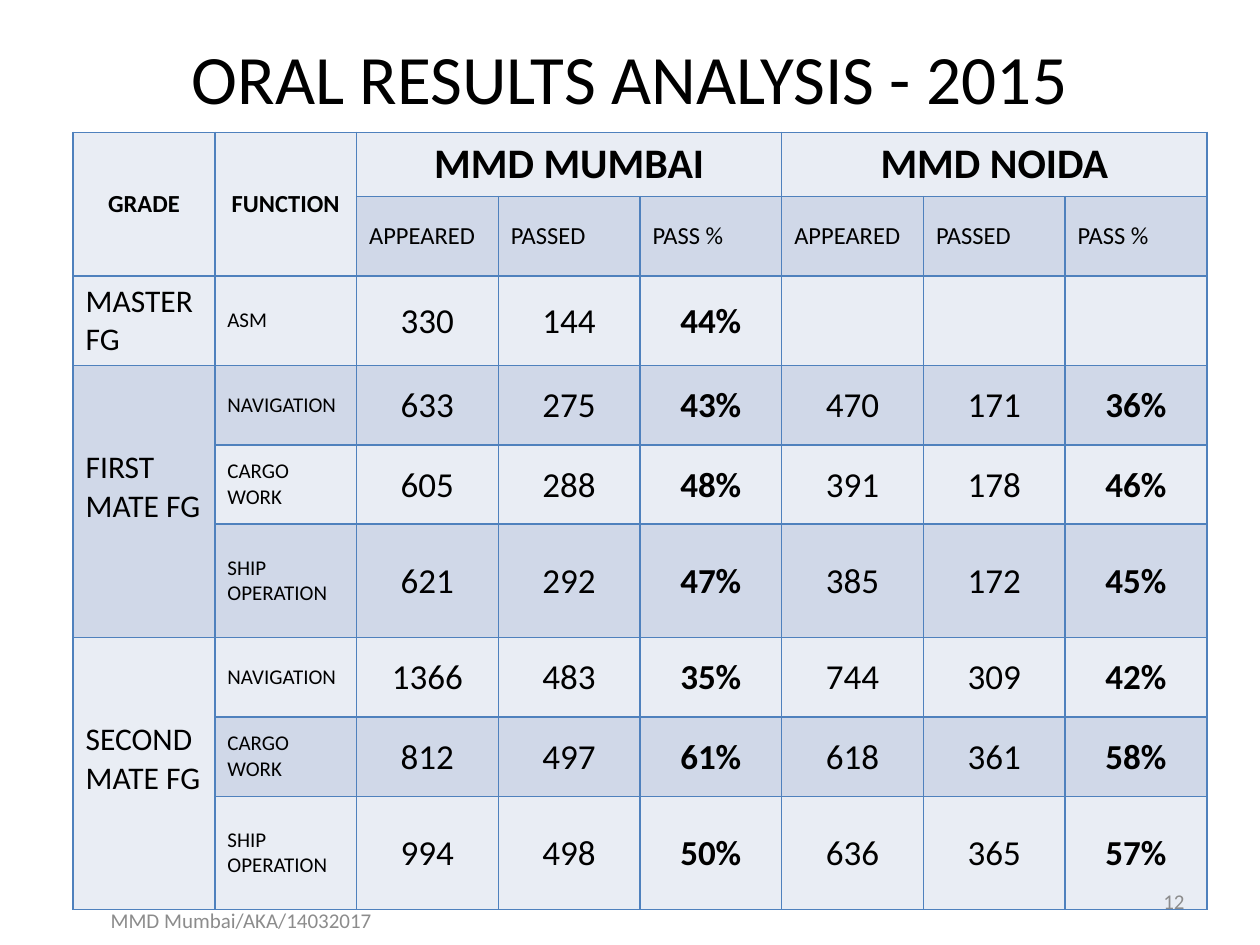
from dataclasses import dataclass

import pptx
import pptx.dml.color
import pptx.enum.text
import pptx.oxml
import pptx.oxml.ns
import pptx.util
from pptx.util import Inches

ALIGN = pptx.enum.text.PP_ALIGN
ANCHOR = pptx.enum.text.MSO_ANCHOR


@dataclass(frozen=True)
class Theme:
    font: str = "Calibri"
    text: str = "000000"
    muted: str = "8C8C8C"
    border: str = "4F81BD"
    stripes: tuple[str, str] = ("E9EDF4", "D0D8E8")
    title: float = 39.6
    office: float = 24
    number: float = 20
    grade: float = 18
    header: float = 14
    small: float = 12


@dataclass(frozen=True)
class Result:
    function: str
    mumbai: tuple[str, str, str]
    noidа: tuple[str, str, str] = ("", "", "")


@dataclass(frozen=True)
class Grade:
    name: str
    results: tuple[Result, ...]
    top: float = 0.66


@dataclass(frozen=True)
class Label:
    text: str
    box: tuple[float, float, float, float]
    align: ALIGN


THEME = Theme()
ROW_HEIGHTS = (0.51, 0.63, 0.71, 0.63, 0.63, 0.9, 0.63, 0.63, 0.9)
COLUMNS = 8
TABLE_WIDTH = 9
OFFICES = ("MMD MUMBAI", "MMD NOIDA")
MEASURES = ("APPEARED", "PASSED", "PASS %")
GRADES = (
    Grade("MASTER FG", (Result("ASM", ("330", "144", "44%")),), 0.05),
    Grade("FIRST MATE FG", (
        Result("NAVIGATION", ("633", "275", "43%"), ("470", "171", "36%")),
        Result("CARGO WORK", ("605", "288", "48%"), ("391", "178", "46%")),
        Result("SHIP OPERATION", ("621", "292", "47%"), ("385", "172", "45%")),
    )),
    Grade("SECOND MATE FG", (
        Result("NAVIGATION", ("1366", "483", "35%"), ("744", "309", "42%")),
        Result("CARGO WORK", ("812", "497", "61%"), ("618", "361", "58%")),
        Result("SHIP OPERATION", ("994", "498", "50%"), ("636", "365", "57%")),
    )),
)
LABELS = (
    Label("12", (7.17, 6.95, 2.33, 0.4), ALIGN.RIGHT),
    Label("MMD Mumbai/AKA/14032017", (0.33, 7.1, 3.17, 0.4), ALIGN.CENTER),
)


def rgb(value: str) -> pptx.dml.color.RGBColor:
    return pptx.dml.color.RGBColor.from_string(value)


def write(tf, text: str, size: float, color: str = THEME.text,
          align: ALIGN = ALIGN.LEFT, bold: bool = False) -> None:
    p = tf.paragraphs[0]
    p.text = text
    p.alignment = align
    p.font.name = THEME.font
    p.font.size = pptx.util.Pt(size)
    p.font.bold = bold
    p.font.color.rgb = rgb(color)


def fill_cell(cell, text: str, size: float, align: ALIGN = ALIGN.LEFT,
              bold: bool = False, anchor: ANCHOR = ANCHOR.MIDDLE) -> None:
    write(cell.text_frame, text, size, align=align, bold=bold)
    cell.vertical_anchor = anchor


def style_cell(cell, color: str) -> None:
    cell.fill.solid()
    cell.fill.fore_color.rgb = rgb(color)
    tc_pr = cell._tc.get_or_add_tcPr()
    for i, side in enumerate(("lnL", "lnR", "lnT", "lnB")):
        tc_pr.insert(i, pptx.oxml.parse_xml(
            f'<a:{side} {pptx.oxml.ns.nsdecls("a")} w="12700"><a:solidFill>'
            f'<a:srgbClr val="{THEME.border}"/></a:solidFill></a:{side}>'))


def add_header(table) -> None:
    for col, text in enumerate(("GRADE", "FUNCTION")):
        table.cell(0, col).merge(table.cell(1, col))
        fill_cell(table.cell(0, col), text, THEME.header, ALIGN.CENTER, True)
    for i, office in enumerate(OFFICES):
        first = 2 + i * len(MEASURES)
        table.cell(0, first).merge(table.cell(0, first + len(MEASURES) - 1))
        fill_cell(table.cell(0, first), office, THEME.office, ALIGN.CENTER, True, ANCHOR.TOP)
        for j, measure in enumerate(MEASURES):
            fill_cell(table.cell(1, first + j), measure, THEME.header)


def add_grade(table, grade: Grade, row: int) -> int:
    end = row + len(grade.results)
    cell = table.cell(row, 0)
    if end - row > 1:
        cell.merge(table.cell(end - 1, 0))
    fill_cell(cell, grade.name, THEME.grade, anchor=ANCHOR.TOP)
    cell.margin_top = Inches(grade.top)
    for r, result in enumerate(grade.results, row):
        fill_cell(table.cell(r, 1), result.function, THEME.small)
        for col, value in enumerate(result.mumbai + result.noidа, 2):
            if value:
                number = table.cell(r, col)
                fill_cell(number, value, THEME.number, ALIGN.CENTER, value.endswith("%"))
                number.margin_left = number.margin_right = number.margin_top = Inches(0.01)
                number.margin_bottom = 0
    return end


def add_results_table(s) -> None:
    table = s.shapes.add_table(
        len(ROW_HEIGHTS), COLUMNS, Inches(0.58), Inches(1.05),
        Inches(TABLE_WIDTH), Inches(sum(ROW_HEIGHTS))).table
    table.first_row = table.horz_banding = False
    for column in table.columns:
        column.width = Inches(TABLE_WIDTH / COLUMNS)
    for r, height in enumerate(ROW_HEIGHTS):
        table.rows[r].height = Inches(height)
        for cell in table.rows[r].cells:
            style_cell(cell, THEME.stripes[r % 2])
    add_header(table)
    row = 2
    for grade in GRADES:
        row = add_grade(table, grade, row)


def add_label(s, label: Label) -> None:
    tf = s.shapes.add_textbox(*map(Inches, label.box)).text_frame
    tf.word_wrap = True
    tf.vertical_anchor = ANCHOR.MIDDLE
    write(tf, label.text, THEME.small, THEME.muted, label.align)


def main() -> None:
    prs = pptx.Presentation()
    prs.slide_width, prs.slide_height = Inches(10), Inches(7.5)
    s = prs.slides.add_slide(prs.slide_layouts[5])
    title = s.shapes.title
    title.left, title.top, title.width, title.height = map(Inches, (0.5, 0.3, 9, 0.62))
    title.text_frame.vertical_anchor = ANCHOR.MIDDLE
    write(title.text_frame, "ORAL RESULTS ANALYSIS - 2015", THEME.title, align=ALIGN.CENTER)
    add_results_table(s)
    for label in LABELS:
        add_label(s, label)
    prs.save("out.pptx")


if __name__ == "__main__":
    main()
